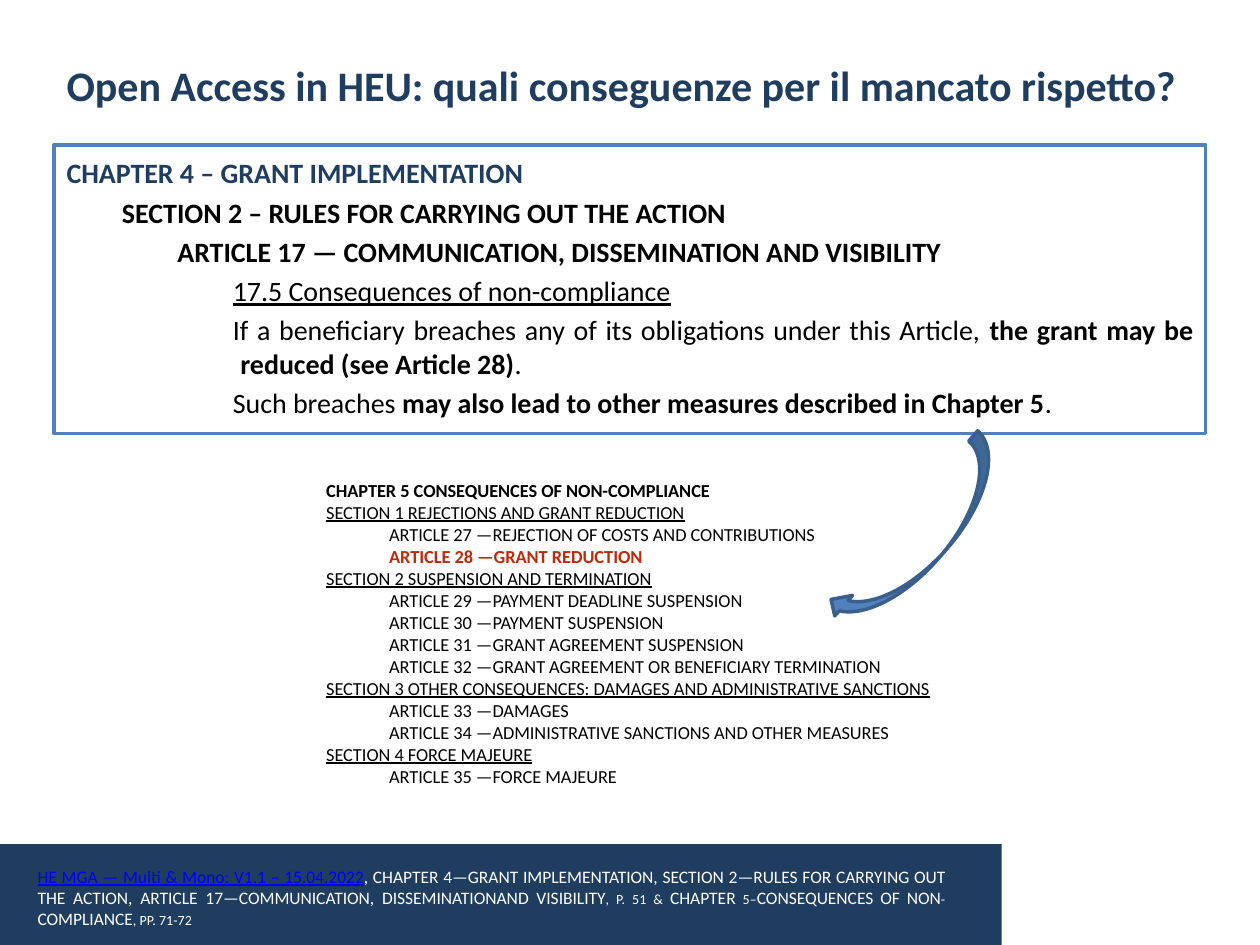
from pptx import Presentation
from pptx.dml.color import RGBColor
from pptx.enum.shapes import MSO_SHAPE as Shape
from pptx.enum.text import MSO_ANCHOR as Anchor, PP_ALIGN as Align
from pptx.util import Inches, Pt

COLORS = {
    "navy": "1F3D5F",
    "blue": "4F81BD",
    "edge": "3A5F8C",
    "link": "0000FF",
    "red": "BD2B0B",
    "black": "000000",
    "white": "FFFFFF",
}


def color(name):
    return RGBColor.from_string(COLORS[name])


def add_run(paragraph, text, size=16, ink="black", bold=False, underline=False, small_caps=False):
    run = paragraph.add_run()
    run.text = text
    run.font.name = "Calibri"
    run.font.size = Pt(size)
    run.font.bold = bold
    run.font.underline = underline
    run.font.color.rgb = color(ink)
    if small_caps:
        run._r.get_or_add_rPr().set("cap", "small")


class SlideBuilder:
    def __init__(self, slide, align=Align.JUSTIFY):
        self.slide = slide
        self.align = align

    def shape(self, kind, box, fill, line=None, rotation=0):
        shape = self.slide.shapes.add_shape(kind, *map(Inches, box))
        shape.shadow.inherit = False
        shape.rotation = rotation
        shape.fill.solid()
        shape.fill.fore_color.rgb = color(fill)
        if line:
            shape.line.color.rgb = color(line)
            shape.line.width = Pt(2)
        else:
            shape.line.fill.background()
        return shape

    def textbox(self, box):
        return self.slide.shapes.add_textbox(*map(Inches, box))

    def frame(self, shape):
        frame = shape.text_frame
        frame.word_wrap = True
        frame.vertical_anchor = Anchor.TOP
        return frame

    def paragraph(self, frame, runs, level=0, indent=(0, 0), align=None, spacing=None, before=0):
        first = not frame.paragraphs[0].runs
        paragraph = frame.paragraphs[0] if first else frame.add_paragraph()
        paragraph.alignment = self.align if align is None else align
        paragraph.level = level
        properties = paragraph._p.get_or_add_pPr()
        properties.set("marL", str(Inches(indent[0])))
        properties.set("indent", str(Inches(indent[1])))
        if spacing:
            paragraph.line_spacing = Pt(spacing)
        paragraph.space_before = Pt(0 if first else before)
        for text, style in runs:
            add_run(paragraph, text, **style)


def add_chapter_box(builder):
    bold, plain = {"bold": True}, {}
    indents = [(0, 0), (0.44, 0), (0.88, 0), (1.38, -0.06)]
    rows = [
        (0, [("CHAPTER 4 – GRANT IMPLEMENTATION", {"ink": "navy", "bold": True})]),
        (1, [("SECTION 2 – RULES FOR CARRYING OUT THE ACTION", bold)]),
        (2, [("ARTICLE 17 — COMMUNICATION, DISSEMINATION AND VISIBILITY ", bold)]),
        (3, [("17.5 Consequences of non-compliance", {"underline": True})]),
        (3, [("If a beneficiary breaches any of its obligations under this Article, ", plain),
             ("the grant may be reduced (see Article 28)", bold), (".", plain)]),
        (3, [("Such breaches ", plain),
             ("may also lead to other measures described in Chapter 5", bold), (".", plain)]),
    ]
    frame = builder.frame(builder.shape(Shape.RECTANGLE, (0.43, 1.15, 9.14, 2.29), "white", "blue"))
    for level, runs in rows:
        builder.paragraph(frame, runs, level, indents[level],
                          spacing=None if level else 22, before=3.2)


def add_outline(builder):
    sections = [
        ("SECTION 1 REJECTIONS AND GRANT REDUCTION",
         ["ARTICLE 27 —REJECTION OF COSTS AND CONTRIBUTIONS",
          "ARTICLE 28 —GRANT REDUCTION"]),
        ("SECTION 2 SUSPENSION AND TERMINATION",
         ["ARTICLE 29 —PAYMENT DEADLINE SUSPENSION",
          "ARTICLE 30 —PAYMENT SUSPENSION",
          "ARTICLE 31 —GRANT AGREEMENT SUSPENSION",
          "ARTICLE 32 —GRANT AGREEMENT OR BENEFICIARY TERMINATION"]),
        ("SECTION 3 OTHER CONSEQUENCES: DAMAGES AND ADMINISTRATIVE SANCTIONS",
         ["ARTICLE 33 —DAMAGES",
          "ARTICLE 34 —ADMINISTRATIVE SANCTIONS AND OTHER MEASURES"]),
        ("SECTION 4 FORCE MAJEURE",
         ["ARTICLE 35 —FORCE MAJEURE"]),
    ]
    frame = builder.frame(builder.textbox((2.49, 3.75, 5.02, 2.75)))

    def line(text, level=0, **style):
        builder.paragraph(frame, [(text, {"size": 10.5, **style})], level,
                          (0.5 * level, 0), Align.LEFT)

    line("CHAPTER 5 CONSEQUENCES OF NON-COMPLIANCE", bold=True)
    for section, articles in sections:
        line(section, underline=True)
        for article in articles:
            key = article.startswith("ARTICLE 28")
            line(article, 1, bold=key, ink="red" if key else "black")


def add_footer(builder):
    white = {"size": 10, "ink": "white"}
    frame = builder.frame(builder.textbox((0.2, 6.82, 7.4, 0.61)))
    builder.paragraph(frame, [
        ("HE MGA — Multi & Mono: V1.1 – 15.04.2022",
         {"size": 10, "ink": "link", "underline": True}),
        (", CHAPTER 4—GRANT IMPLEMENTATION, SECTION 2—RULES FOR CARRYING OUT THE ACTION, "
         "ARTICLE 17—COMMUNICATION, DISSEMINATIONAND VISIBILITY", white),
        (", p. 51 & CHAPTER 5–CONSEQUENCES OF NON-COMPLIANCE, pp. 71-72",
         {**white, "small_caps": True}),
    ])


def main():
    presentation = Presentation()
    presentation.slide_width = Inches(10)
    presentation.slide_height = Inches(7.5)
    builder = SlideBuilder(presentation.slides.add_slide(presentation.slide_layouts[6]))

    builder.shape(Shape.RECTANGLE, (0, 6.7, 7.95, 0.8), "navy")
    title = builder.frame(builder.textbox((0.43, 0.52, 9.21, 0.71)))
    builder.paragraph(title, [("Open Access in HEU: quali conseguenze per il mancato rispetto?",
                               {"size": 24, "ink": "navy", "bold": True})], spacing=22)
    add_chapter_box(builder)
    add_footer(builder)
    add_outline(builder)
    builder.shape(Shape.CURVED_LEFT_ARROW, (7.09, 3.33, 0.43, 1.88), "blue", "edge", rotation=41)

    presentation.save("out.pptx")


if __name__ == "__main__":
    main()
